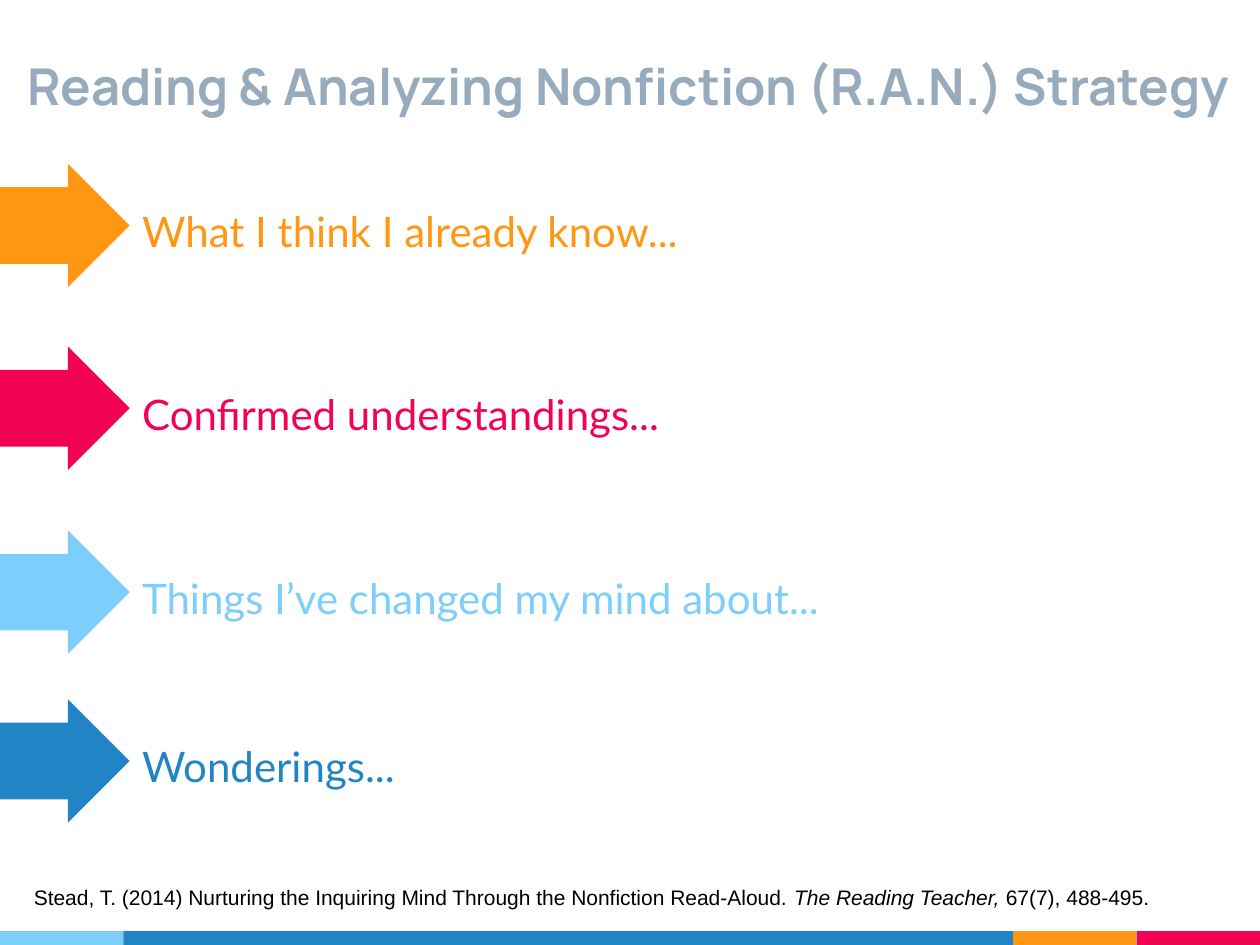
from pptx import Presentation
from pptx.dml.color import RGBColor
from pptx.enum.shapes import MSO_SHAPE
from pptx.enum.text import MSO_ANCHOR
from pptx.util import Inches, Pt

COLORS = {
    "orange": "FF9715",
    "pink": "F20253",
    "sky": "7ECEFD",
    "blue": "2185C5",
    "slate": "97ABBC",
    "black": "000000",
}
ARROW_WIDTH, ARROW_HEIGHT = 1.03, 0.98


def add_text(slide, box, *runs, font, size, color, bold=False,
             anchor=MSO_ANCHOR.BOTTOM, line_spacing=None):
    frame = slide.shapes.add_textbox(*map(Inches, box)).text_frame
    frame.word_wrap = True
    frame.vertical_anchor = anchor
    frame.margin_left = frame.margin_right = Inches(0.1)
    frame.margin_top = frame.margin_bottom = Inches(0.1)
    paragraph = frame.paragraphs[0]
    paragraph.line_spacing = line_spacing
    for words, italic in runs:
        run = paragraph.add_run()
        run.text = words
        run.font.name = font
        run.font.size = Pt(size)
        run.font.bold = bold
        run.font.italic = italic
        run.font.color.rgb = RGBColor.from_string(COLORS[color])


def add_filled(slide, preset, box, color):
    shape = slide.shapes.add_shape(preset, *map(Inches, box))
    shape.shadow.inherit = False
    shape.fill.solid()
    shape.fill.fore_color.rgb = RGBColor.from_string(COLORS[color])
    shape.line.fill.background()
    return shape


def add_footer_band(slide, box):
    left, top, width, height = box
    end = 0.98
    segments = [("sky", end), ("blue", width - 3 * end),
                ("orange", end), ("pink", end)]
    for color, length in segments:
        add_filled(slide, MSO_SHAPE.RECTANGLE, (left, top, length, height), color)
        left += length


def add_prompt(slide, box, prompt, color):
    left, top, width, height = box
    arrow = add_filled(slide, MSO_SHAPE.RIGHT_ARROW,
                       (left, top, ARROW_WIDTH, height), color)
    arrow.adjustments[0] = 0.62
    arrow.adjustments[1] = 0.5
    add_text(slide, (left + ARROW_WIDTH, top + 0.14, width - ARROW_WIDTH, 0.69),
             (prompt, False), font="Lato", size=24, color=color)


def add_heading(slide, box):
    add_text(slide, box, ("Reading & Analyzing Nonfiction (R.A.N.) Strategy", False),
             font="Manrope", size=29, color="slate", bold=True)


def add_citation(slide, box):
    add_text(slide, box,
             ("Stead, T. (2014) Nurturing the Inquiring Mind Through "
              "the Nonfiction Read-Aloud. ", False),
             ("The Reading Teacher,", True),
             (" 67(7), 488-495.", False),
             font="Arial", size=12, color="black",
             anchor=MSO_ANCHOR.TOP, line_spacing=1.15)


def main():
    deck = Presentation()
    deck.slide_width, deck.slide_height = Inches(10), Inches(7.5)
    slide = deck.slides.add_slide(deck.slide_layouts[6])

    add_footer_band(slide, (0, 7.39, 10, 0.11))
    add_heading(slide, (0.12, 0.19, 9.77, 0.83))
    prompts = [
        (1.3, "What I think I already know...", "orange"),
        (2.75, "Confirmed understandings...", "pink"),
        (4.21, "Things I’ve changed my mind about...", "sky"),
        (5.55, "Wonderings...", "blue"),
    ]
    for top, prompt, color in prompts:
        add_prompt(slide, (0, top, 9.67, ARROW_HEIGHT), prompt, color)
    add_citation(slide, (0.17, 6.89, 9.77, 0.4))

    deck.save("out.pptx")


if __name__ == "__main__":
    main()
